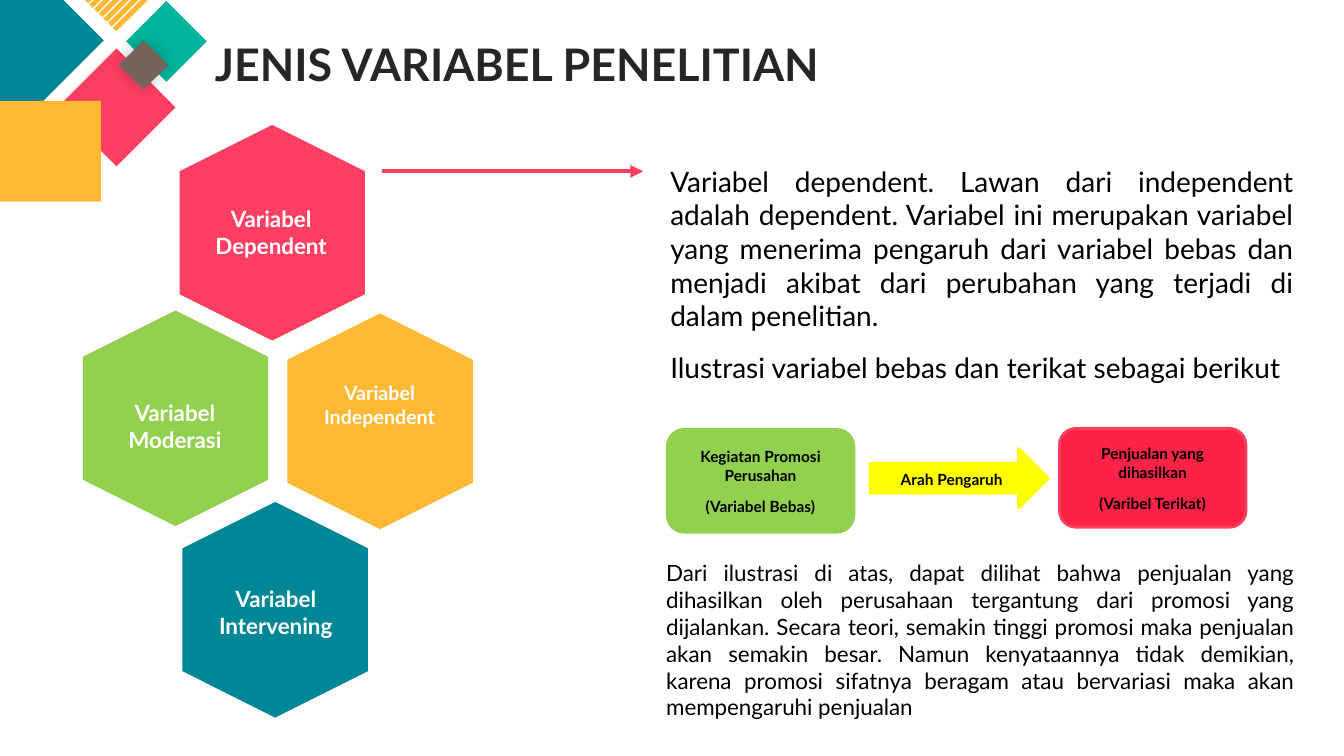
from math import sqrt

from lxml import etree
from pptx import Presentation
from pptx.dml.color import RGBColor
from pptx.enum.shapes import MSO_CONNECTOR, MSO_SHAPE
from pptx.enum.text import MSO_ANCHOR, MSO_AUTO_SIZE, PP_ALIGN
from pptx.oxml.ns import qn
from pptx.util import Inches, Pt

DIAMOND, HEXAGON = MSO_SHAPE.DIAMOND, MSO_SHAPE.HEXAGON
RECTANGLE, ROUNDED = MSO_SHAPE.RECTANGLE, MSO_SHAPE.ROUNDED_RECTANGLE
RIGHT_ARROW, STRAIGHT = MSO_SHAPE.RIGHT_ARROW, MSO_CONNECTOR.STRAIGHT
CENTER, JUSTIFY = PP_ALIGN.CENTER, PP_ALIGN.JUSTIFY
TOP, MIDDLE = MSO_ANCHOR.TOP, MSO_ANCHOR.MIDDLE
NO_FIT = MSO_AUTO_SIZE.NONE

WIDTH, HEIGHT = 13.33, 7.5
FONT = "Lato"
TEAL, PINK, AMBER, GREEN = "008795", "FE3F61", "FEB834", "92D050"
MINT, BROWN, RED, ROSE, YELLOW = "01B59C", "75645C", "FE2247", "FE4060", "FFFF00"
BLACK, WHITE, DARK = "000000", "FFFFFF", "262626"

# Hexagon place, label place, label, fill, label size
HEXAGONS = [
    ((20.25, 43.47), (22.43, 49.73, 11.63, 7.6), "Variabel Independent", AMBER, 14),
    ((12.23, 18.53), (14.63, 26.53, 11.1, 7.2), "Variabel Dependent", PINK, 16),
    ((12.45, 68.4), (14.18, 76.8, 12.68, 8.53), "Variabel Intervening", TEAL, 16),
    ((5.03, 43.07), (7.2, 52.13, 11.63, 8.53), "Variabel Moderasi", GREEN, 16),
]
HEXAGON_SIZE = (16.05, 24.53)

PASSAGES = [
    ((49.13, 21.07, 47.85, 23.73), 20,
     "Variabel dependent. Lawan dari independent adalah dependent. Variabel ini "
     "merupakan variabel yang menerima pengaruh dari variabel bebas dan menjadi "
     "akibat dari perubahan yang terjadi di dalam penelitian."),
    ((49.13, 45.73, 47.85, 10.27), 20,
     "Ilustrasi variabel bebas dan terikat sebagai berikut"),
    ((48.83, 73.33, 48.23, 22.93), 16,
     "Dari ilustrasi di atas, dapat dilihat bahwa penjualan yang dihasilkan oleh "
     "perusahaan tergantung dari promosi yang dijalankan. Secara teori, semakin "
     "tinggi promosi maka penjualan akan semakin besar. Namun kenyataannya tidak "
     "demikian, karena promosi sifatnya beragam atau bervariasi maka akan "
     "mempengaruhi penjualan"),
]

FLOW = [
    (ROUNDED, (49.65, 56.8, 13.88, 13.6), GREEN, GREEN,
     ["Kegiatan Promosi Perusahan", "(Variabel Bebas)"]),
    (ROUNDED, (78.83, 56.67, 13.88, 13.07), RED, ROSE,
     ["Penjualan yang dihasilkan", "(Varibel Terikat)"]),
    (RIGHT_ARROW, (64.73, 59.33, 13.28, 7.87), YELLOW, YELLOW, ["Arah Pengaruh"]),
]


def color(value):
    return RGBColor.from_string(value)


def across(percent):
    return Inches(WIDTH * percent / 100)


def down(percent):
    return Inches(HEIGHT * percent / 100)


def area(left, top, width, height):
    """Turn percentages of the slide into lengths."""
    return across(left), down(top), across(width), down(height)


def paint(shape, fill, line=None):
    shape.shadow.inherit = False
    shape.fill.solid()
    shape.fill.fore_color.rgb = color(fill)
    if line:
        shape.line.color.rgb = color(line)
        shape.line.width = Pt(2)
    else:
        shape.line.fill.background()


def add_block(page, kind, place, fill, line=None, rotation=0):
    shape = page.shapes.add_shape(kind, *area(*place))
    shape.rotation = rotation
    paint(shape, fill, line)
    return shape


def write(frame, texts, size, ink, align, bold=False, anchor=TOP):
    frame.auto_size = NO_FIT
    frame.vertical_anchor = anchor
    for index, text in enumerate(texts):
        para = frame.add_paragraph() if index else frame.paragraphs[0]
        para.text = text
        para.alignment = align
        para.font.name = FONT
        para.font.size = Pt(size)
        para.font.bold = bold
        para.font.color.rgb = color(ink)


def add_text(page, place, text, size, ink, align, bold=False):
    frame = page.shapes.add_textbox(*area(*place)).text_frame
    frame.word_wrap = True
    write(frame, [text], size, ink, align, bold)


def add_glow_shadow(shape):
    effects = shape.element.spPr.find(qn("a:effectLst"))
    shadow = etree.SubElement(effects, qn("a:outerShdw"), blurRad=str(Pt(13)), dist="0")
    tint = etree.SubElement(shadow, qn("a:srgbClr"), val=BLACK)
    etree.SubElement(tint, qn("a:alpha"), val="21000")


def add_striped_circle(page, center_x, center_y, radius, pitch, thickness):
    """Draw diagonal bands cut off by a circle, all in inches."""
    def edge(offset, side):
        half_chord = side * sqrt(max(radius ** 2 - offset ** 2, 0))
        return (center_x + (offset + half_chord) / sqrt(2),
                center_y + (offset - half_chord) / sqrt(2))

    builder = None
    for band in range(-3, 4):
        low = max(band * pitch - thickness / 2, -radius)
        high = min(band * pitch + thickness / 2, radius)
        offsets = [low + (high - low) * step / 4 for step in range(5)]
        points = [edge(offset, 1) for offset in offsets]
        points += [edge(offset, -1) for offset in reversed(offsets)]
        if builder is None:
            builder = page.shapes.build_freeform(*points[0], scale=Inches(1))
        else:
            builder.move_to(*points[0])
        builder.add_line_segments(points[1:], close=True)
    paint(builder.convert_to_shape(), AMBER)


def add_ornament(page):
    add_block(page, DIAMOND, (-7.88, -8.53, 15.6, 27.73), TEAL)
    add_block(page, DIAMOND, (4.28, 6.4, 8.78, 15.6), PINK)
    for stripe in range(7):
        place = (7.43 + 0.35 * stripe, -4.93 + 0.62 * stripe, 0.38, 6)
        add_block(page, RECTANGLE, place, AMBER, rotation=45)
    add_block(page, DIAMOND, (9.38, 0.13, 6, 10.67), MINT)
    add_glow_shadow(add_block(page, DIAMOND, (8.85, 5.33, 3.68, 6.53), BROWN))
    add_striped_circle(page, 0.51, 1.39, 0.16, 0.05, 0.04)


def add_title(page, text):
    title = page.shapes.title
    title.left, title.top, title.width, title.height = area(15.23, 4.13, 46.5, 8.53)
    title.text_frame.word_wrap = False
    write(title.text_frame, [text], 32, DARK, CENTER, bold=True)


def add_pointer(page, start, end, level):
    pointer = page.shapes.add_connector(
        STRAIGHT, across(start), down(level), across(end), down(level))
    pointer.line.color.rgb = color(ROSE)
    pointer.line.width = Pt(3)
    etree.SubElement(pointer.line._get_or_add_ln(), qn("a:tailEnd"), type="triangle")
    etree.SubElement(pointer.element.spPr, qn("a:effectLst"))


def add_flow_step(page, kind, place, fill, line, texts):
    frame = add_block(page, kind, place, fill, line).text_frame
    frame.word_wrap = True
    write(frame, texts, 11, BLACK, CENTER, bold=True, anchor=MIDDLE)
    for para in frame.paragraphs:
        para.line_spacing = 1.07
        para.space_after = Pt(8)


def main():
    deck = Presentation()
    deck.slide_width, deck.slide_height = Inches(WIDTH), Inches(HEIGHT)
    page = deck.slides.add_slide(deck.slide_layouts[5])
    add_ornament(page)
    add_title(page, "JENIS VARIABEL PENELITIAN")
    for corner, label_place, label, fill, size in HEXAGONS:
        add_block(page, HEXAGON, corner + HEXAGON_SIZE, fill, rotation=90)
        add_text(page, label_place, label, size, WHITE, CENTER, bold=True)
    add_pointer(page, 28.43, 47.85, 22.67)
    for place, size, text in PASSAGES:
        add_text(page, place, text, size, BLACK, JUSTIFY)
    for step in FLOW:
        add_flow_step(page, *step)
    deck.save("out.pptx")


if __name__ == "__main__":
    main()
